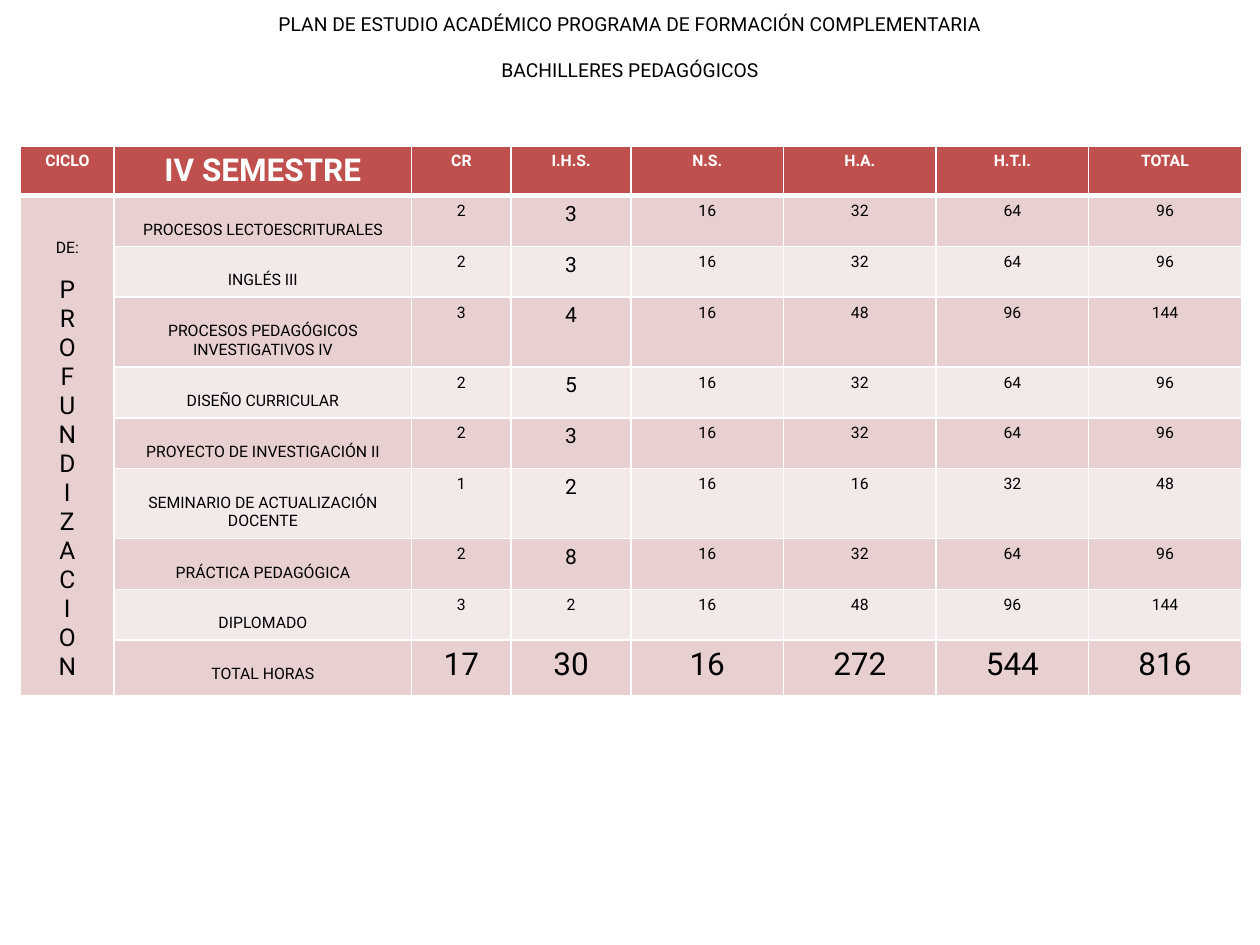
from lxml.etree import SubElement
from pptx import Presentation
from pptx.dml.color import RGBColor
from pptx.enum.text import MSO_ANCHOR, MSO_AUTO_SIZE, PP_ALIGN
from pptx.oxml.ns import qn
from pptx.util import Pt

# Content
TITLE = ["PLAN DE ESTUDIO ACADÉMICO PROGRAMA DE FORMACIÓN COMPLEMENTARIA",
         "BACHILLERES PEDAGÓGICOS"]
HEADERS = ["CICLO", "IV SEMESTRE", "CR", "I.H.S.", "N.S.", "H.A.", "H.T.I.", "TOTAL"]
CYCLE = ["DE:", *"PROFUNDIZACION"]
SUBJECTS = [
    ("PROCESOS LECTOESCRITURALES", 2, 3, 16, 32, 64, 96),
    ("INGLÉS III", 2, 3, 16, 32, 64, 96),
    ("PROCESOS PEDAGÓGICOS INVESTIGATIVOS IV", 3, 4, 16, 48, 96, 144),
    ("DISEÑO CURRICULAR", 2, 5, 16, 32, 64, 96),
    ("PROYECTO DE INVESTIGACIÓN II", 2, 3, 16, 32, 64, 96),
    ("SEMINARIO DE ACTUALIZACIÓN DOCENTE", 1, 2, 16, 16, 32, 48),
    ("PRÁCTICA PEDAGÓGICA", 2, 8, 16, 32, 64, 96),
    ("DIPLOMADO", 3, 2, 16, 48, 96, 144),
    ("TOTAL HORAS", 17, 30, 16, 272, 544, 816),
]
COLORS = {"text": "000000", "white": "FFFFFF", "header": "C0504D",
          "dark band": "E8D0D0", "light band": "F4E9E9"}
FONT = "Roboto"

# Measures in points
COLUMN_WIDTHS = [53.4, 170, 57, 68.4] + [87.2] * 4
HEADER_HEIGHT, ROW_HEIGHT, TWO_LINE_HEIGHT, TOTAL_HEIGHT = 28.5, 29, 40, 32
TWO_LINE_LENGTH = 30
MARGIN, SMALL_LINE = 3.6, 10.55
SMALL, MEDIUM, LETTER, LARGE = 9, 12, 14, 18


def write_line(paragraph, text, size, color="text", bold=False):
    paragraph.alignment = PP_ALIGN.CENTER
    run = paragraph.add_run()
    run.text = str(text)
    run.font.name = FONT
    run.font.size = Pt(size)
    run.font.bold = bold
    run.font.color.rgb = RGBColor.from_string(COLORS[color])


def style_cell(cell, fill, bottom=1):
    properties = cell._tc.get_or_add_tcPr()
    for side, width in (("L", 1), ("R", 1), ("T", 1), ("B", bottom)):
        line = SubElement(properties, qn(f"a:ln{side}"), w=str(Pt(width)))
        solid = SubElement(line, qn("a:solidFill"))
        SubElement(solid, qn("a:srgbClr"), val=COLORS["white"])
    cell.fill.solid()
    cell.fill.fore_color.rgb = RGBColor.from_string(COLORS[fill])
    cell.margin_top = cell.margin_bottom = Pt(MARGIN)


def number_size(row, column):
    if row == len(SUBJECTS):
        return LARGE
    is_weekly_hours = HEADERS[column] == "I.H.S."
    return MEDIUM if is_weekly_hours and SUBJECTS[row - 1][0] != "DIPLOMADO" else SMALL


presentation = Presentation()
presentation.slide_width, presentation.slide_height = Pt(720), Pt(540)
slide = presentation.slides.add_slide(presentation.slide_layouts[5])

# Title
title = slide.shapes.title
title.left, title.top, title.width, title.height = Pt(139), Pt(3.6), Pt(442), Pt(47.5)
frame = title.text_frame
frame.auto_size = MSO_AUTO_SIZE.NONE
frame.vertical_anchor = MSO_ANCHOR.TOP
write_line(frame.paragraphs[0], TITLE[0], 11)
second = frame.add_paragraph()
second.space_before = Pt(13)
write_line(second, TITLE[1], 11)

# Table grid
heights = [HEADER_HEIGHT] + [
    TWO_LINE_HEIGHT if len(subject[0]) > TWO_LINE_LENGTH else ROW_HEIGHT
    for subject in SUBJECTS[:-1]] + [TOTAL_HEIGHT]
table = slide.shapes.add_table(
    len(heights), len(HEADERS), Pt(11.8), Pt(83.3),
    Pt(sum(COLUMN_WIDTHS)), Pt(sum(heights))).table
for column, width in zip(table.columns, COLUMN_WIDTHS):
    column.width = Pt(width)
for row, height in zip(table.rows, heights):
    row.height = Pt(height)

# Header row
for column, header in enumerate(HEADERS):
    cell = table.cell(0, column)
    style_cell(cell, "header", bottom=3)
    write_line(cell.text_frame.paragraphs[0], header,
               LARGE if column == 1 else SMALL, "white", bold=True)

# Subjects and their hours
for row, subject in enumerate(SUBJECTS, 1):
    band = "dark band" if row % 2 else "light band"
    style_cell(table.cell(row, 0), "dark band")
    for column, value in enumerate(subject, 1):
        cell = table.cell(row, column)
        style_cell(cell, band)
        if column == 1:
            cell.margin_top = Pt(MARGIN + SMALL_LINE)
        size = SMALL if column == 1 else number_size(row, column)
        write_line(cell.text_frame.paragraphs[0], value, size)

# Cycle name, one letter a line
cycle = table.cell(1, 0)
cycle.merge(table.cell(len(SUBJECTS), 0))
cycle.margin_top = Pt(MARGIN + 2 * SMALL_LINE)
for index, text in enumerate(CYCLE):
    frame = cycle.text_frame
    paragraph = frame.add_paragraph() if index else frame.paragraphs[0]
    if index == 1:
        paragraph.space_before = Pt(SMALL_LINE)
    write_line(paragraph, text, LETTER if index else SMALL)

presentation.save("out.pptx")
